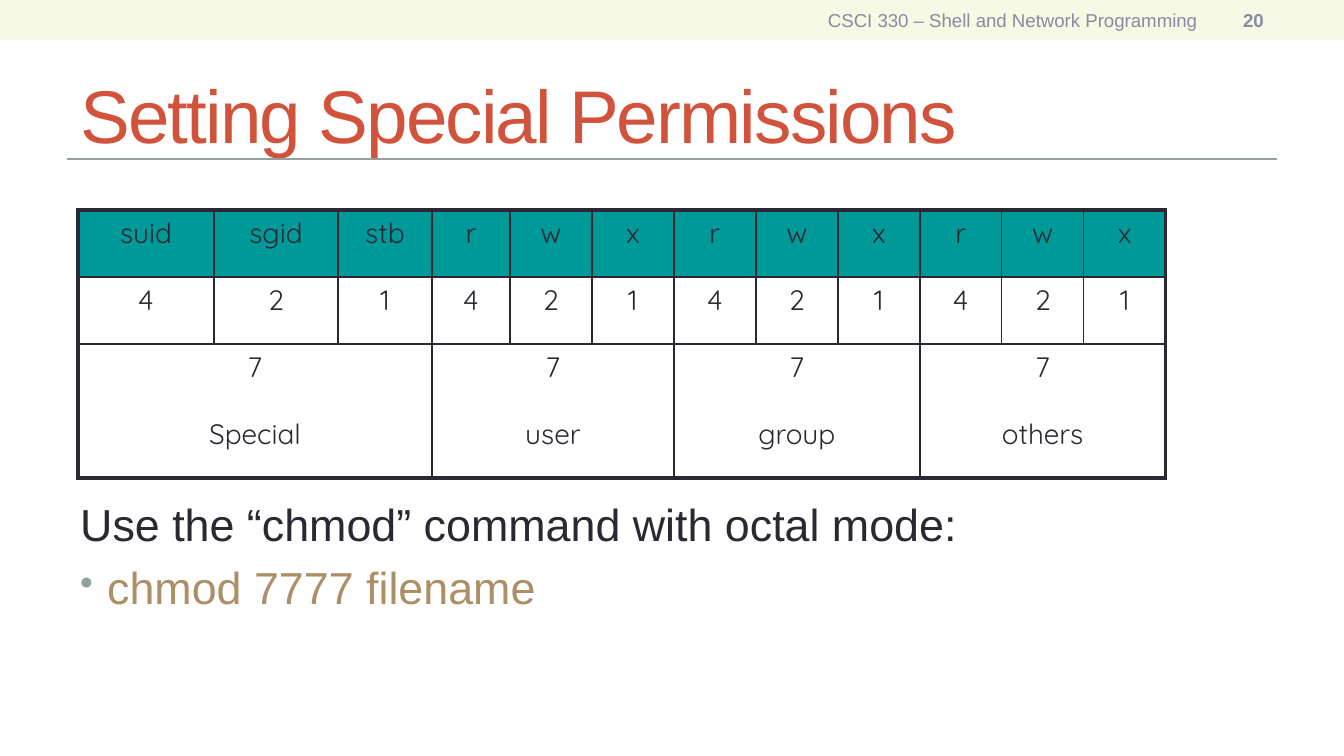
from dataclasses import dataclass

import pptx
import pptx.dml.color
import pptx.enum.shapes
import pptx.enum.text
import pptx.oxml.ns
import pptx.util
from lxml import etree

PX = 914400 / 134.4  # EMU in one px
INK, RED, TEAL, GREY, GREEN, TAN = "292934", "D2533C", "009999", "8A8AA3", "93A299", "AD8F67"
ALIGN = pptx.enum.text.PP_ALIGN
MIDDLE = pptx.enum.text.MSO_ANCHOR.MIDDLE


@dataclass
class Box:
    x: int
    y: int
    w: int
    h: int

    def emu(self) -> list[int]:
        return [px(v) for v in (self.x, self.y, self.w, self.h)]


@dataclass
class Style:
    size: int
    color: str
    font: str = "Arial"
    bold: bool = False
    align: int = ALIGN.LEFT


def px(n: int) -> int:
    return round(n * PX)


def rgb(color: str):
    return pptx.dml.color.RGBColor.from_string(color)


def sub(parent, tag: str, **attrs: str):
    return etree.SubElement(parent, pptx.oxml.ns.qn(tag), **attrs)


def write(p, text: str, style: Style) -> None:
    p.text = text
    p.alignment = style.align
    p.font.name, p.font.size = style.font, pptx.util.Pt(style.size)
    p.font.bold = style.bold
    p.font.color.rgb = rgb(style.color)


def text_box(s, box: Box, text: str, style: Style):
    tf = s.shapes.add_textbox(*box.emu()).text_frame
    tf.word_wrap = True
    tf.vertical_anchor = MIDDLE
    write(tf.paragraphs[0], text, style)
    return tf


def border(cell, side: str, width: float) -> None:
    ln = sub(cell._tc.get_or_add_tcPr(), f"a:ln{side}", w=str(pptx.util.Pt(width)))
    if width:
        sub(sub(ln, "a:solidFill"), "a:srgbClr", val=INK)
    else:
        sub(ln, "a:noFill")


prs = pptx.Presentation()
prs.slide_width, prs.slide_height = px(1344), px(756)
s = prs.slides.add_slide(prs.slide_layouts[5])

# Header band and title rule
sp = s.shapes.add_shape(pptx.enum.shapes.MSO_SHAPE.RECTANGLE, *Box(0, 0, 1344, 40).emu())
sp.shadow.inherit = False
sp.fill.solid()
sp.fill.fore_color.rgb = rgb("F6F9E4")
sp.line.fill.background()

rule = s.shapes.add_connector(
    pptx.enum.shapes.MSO_CONNECTOR.STRAIGHT, px(67), px(159), px(1277), px(159))
rule.line.color.rgb = rgb(GREEN)
rule.line.width = pptx.util.Pt(0.75)
sub(rule._element.spPr, "a:effectLst")

# Title
title = s.shapes.title
title.left, title.top, title.width, title.height = Box(67, 59, 1210, 109).emu()
tf = title.text_frame
tf.vertical_anchor = MIDDLE
write(tf.paragraphs[0], "Setting Special Permissions", Style(40, RED))
tf.paragraphs[0].runs[0]._r.get_or_add_rPr().set("spc", "-100")

# Course name and slide number
text_box(s, Box(504, 2, 706, 36), "CSCI 330 – Shell and Network Programming",
         Style(10, GREY, align=ALIGN.RIGHT))
text_box(s, Box(1210, 2, 67, 36), "20", Style(10, GREY, bold=True, align=ALIGN.RIGHT))

# Permission table: three bits for each group, then the group's sum and name
GROUPS = ["Special", "user", "group", "others"]
COLS = [136, 124, 94, 78] + [82] * 8
ROW_H = 67
ROWS = [
    ["suid", "sgid", "stb"] + ["r", "w", "x"] * 3,
    ["4", "2", "1"] * len(GROUPS),
    ["7"] * len(GROUPS),
    GROUPS,
]
OUTER, INNER = 2.25, 1
ROW_EDGES = [OUTER, INNER, INNER, 0, OUTER]


def column_edge(col: int) -> float:
    return OUTER if col in (0, len(COLS)) else INNER


table = s.shapes.add_table(
    len(ROWS), len(COLS), *Box(78, 210, sum(COLS), ROW_H * len(ROWS)).emu()).table
table.first_row = table.horz_banding = False
for column, width in zip(table.columns, COLS):
    column.width = px(width)

for r, texts in enumerate(ROWS):
    table.rows[r].height = px(ROW_H)
    span = len(COLS) // len(texts)
    for i, text in enumerate(texts):
        c = i * span
        cell = table.cell(r, c)
        if span > 1:
            cell.merge(table.cell(r, c + span - 1))
        cell.margin_top = cell.margin_bottom = px(6)
        write(cell.text_frame.paragraphs[0], text,
              Style(15, INK, "Quicksand", align=ALIGN.CENTER))
        for k in range(c, c + span):
            part = table.cell(r, k)
            border(part, "L", column_edge(k) if k == c else 0)
            border(part, "R", column_edge(c + span) if k in (c, c + span - 1) else 0)
            border(part, "T", ROW_EDGES[r])
            border(part, "B", ROW_EDGES[r + 1])
            if r == 0:
                part.fill.solid()
                part.fill.fore_color.rgb = rgb(TEAL)
            else:
                part.fill.background()

# Command text
tf = text_box(s, Box(67, 497, 1210, 213), "Use the “chmod” command with octal mode:",
              Style(24, INK))
tf.vertical_anchor = pptx.enum.text.MSO_ANCHOR.TOP
tf.margin_top = 0
p = tf.add_paragraph()
write(p, "chmod 7777 filename", Style(24, TAN))
p.space_before = pptx.util.Pt(5)
pPr = p._p.get_or_add_pPr()
pPr.set("marL", str(px(27)))
pPr.set("indent", str(-px(27)))
bullet = [etree.Element(pptx.oxml.ns.qn(tag)) for tag in ("a:buClr", "a:buSzPct", "a:buChar")]
sub(bullet[0], "a:srgbClr", val=GREEN)
bullet[1].set("val", "85000")
bullet[2].set("char", "•")
for el in bullet:
    pPr.find(pptx.oxml.ns.qn("a:defRPr")).addprevious(el)

prs.save("out.pptx")
